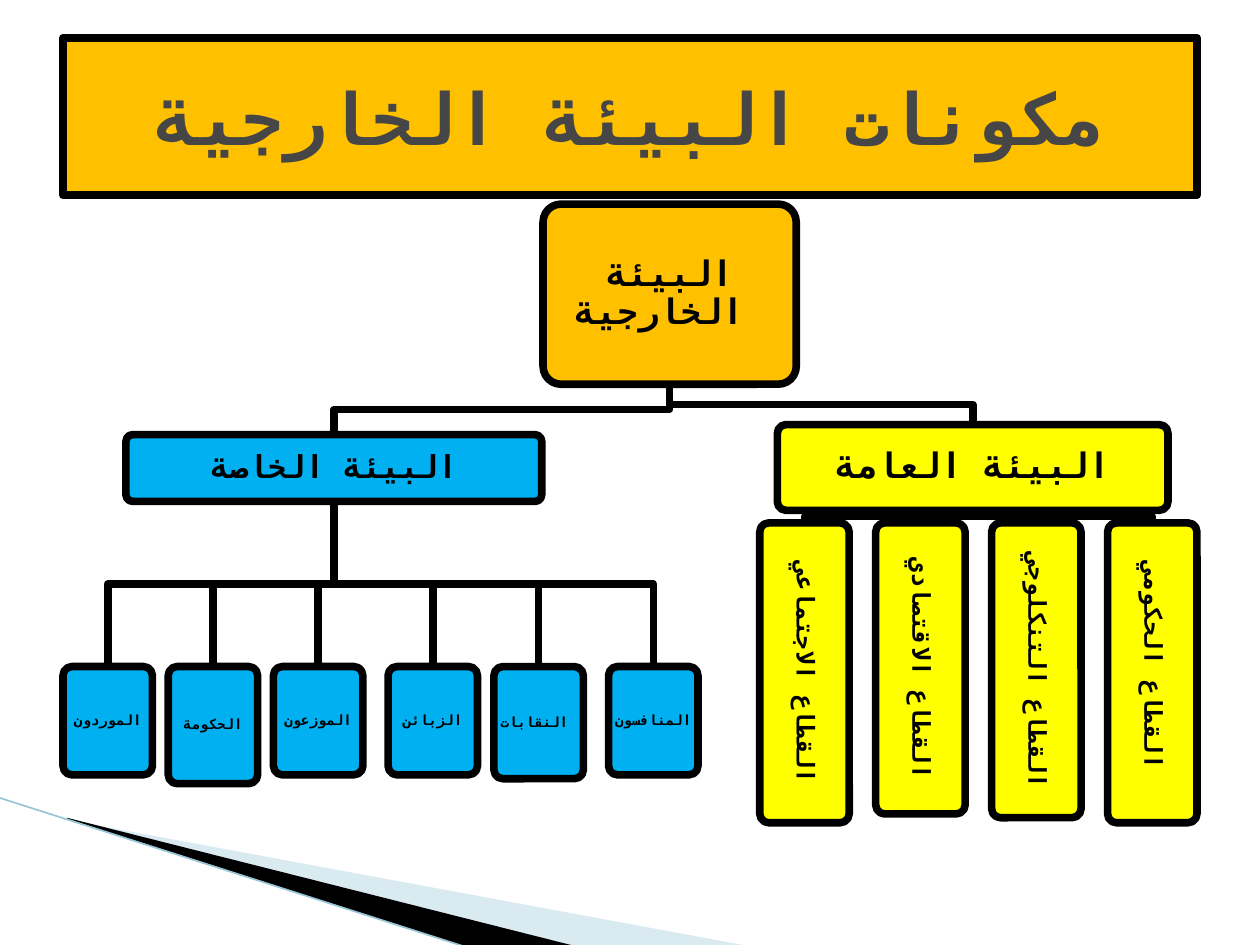
from dataclasses import dataclass

from lxml import etree
from pptx import Presentation
from pptx import util as u
from pptx.dml.color import RGBColor
from pptx.enum import shapes, text
from pptx.oxml import ns

COLORS = {
    "gold": "FFC000",
    "blue": "00B0F0",
    "yellow": "FFFF00",
    "black": "000000",
    "gray": "464646",
    "ice": "A0CBDC",
    "edge": "97C5D8",
}
FONT = "DejaVu Sans Mono"
COLUMNS, ROWS = 100, 75
LINE = 4.33

prs = Presentation()
prs.slide_width, prs.slide_height = u.Inches(10), u.Inches(7.5)


@dataclass(frozen=True)
class Box:
    label: str
    col: float
    row: float
    cols: float
    rows: float
    color: str
    size: int
    inset: float
    vertical: bool = False

    @property
    def middle(self) -> float:
        return self.col + self.cols / 2

    @property
    def bottom(self) -> float:
        return self.row + self.rows


def x(col: float) -> int:
    return round(prs.slide_width * col / COLUMNS)


def y(row: float) -> int:
    return round(prs.slide_height * row / ROWS)


def rgb(name: str) -> RGBColor:
    return RGBColor.from_string(COLORS[name])


def paint(sp, fill: str, width: float) -> None:
    sp.fill.solid()
    sp.fill.fore_color.rgb = rgb(fill)
    sp.line.color.rgb = rgb("black")
    sp.line.width = u.Pt(width)


def write(sp, label: str, *, size: int, color: str = "black", spacing: float = 1.0) -> None:
    tf = sp.text_frame
    tf.word_wrap = True
    tf.auto_size = text.MSO_AUTO_SIZE.NONE
    tf.vertical_anchor = text.MSO_ANCHOR.MIDDLE
    p = tf.paragraphs[0]
    p.alignment = text.PP_ALIGN.CENTER
    p.line_spacing = spacing
    r = p.add_run()
    r.text = label
    r.font.size = u.Pt(size)
    r.font.bold = True
    r.font.name = FONT
    r.font.color.rgb = rgb(color)
    etree.SubElement(r._r.get_or_add_rPr(), ns.qn("a:cs"), typeface=FONT)


def draw_path(s, points: list[tuple[float, float]], *, close: bool):
    start, *rest = [(x(col), y(row)) for col, row in points]
    builder = s.shapes.build_freeform(*start)
    builder.add_line_segments(rest, close=close)
    sp = builder.convert_to_shape()
    sp.shadow.inherit = False
    return sp


def draw_wedge(s, points: list[tuple[float, float]], color: str, opacity: int) -> None:
    sp = draw_path(s, points, close=True)
    sp.fill.solid()
    sp.fill.fore_color.rgb = rgb(color)
    sp.line.fill.background()
    if opacity < 100:
        clr = sp._element.spPr.find(".//" + ns.qn("a:srgbClr"))
        etree.SubElement(clr, ns.qn("a:alpha"), val=str(opacity * 1000))


def draw_box(s, box: Box) -> None:
    sp = s.shapes.add_shape(
        shapes.MSO_SHAPE.ROUNDED_RECTANGLE, x(box.col), y(box.row), x(box.cols), y(box.rows)
    )
    sp.adjustments[0] = 0.1
    sp.shadow.inherit = False
    paint(sp, box.color, LINE)
    write(sp, box.label, size=box.size, spacing=0.9)
    tf = sp.text_frame
    tf.margin_left = tf.margin_right = tf.margin_top = tf.margin_bottom = u.Inches(box.inset)
    if box.vertical:
        tf._txBody.bodyPr.set("vert", "vert")


def draw_branch(s, parent: Box, child: Box) -> None:
    bend = (parent.bottom + child.row) / 2
    points = [
        (parent.middle, parent.bottom),
        (parent.middle, bend),
        (child.middle, bend),
        (child.middle, child.row),
    ]
    sp = draw_path(s, points, close=False)
    sp.fill.background()
    sp.line.color.rgb = rgb("black")
    sp.line.width = u.Pt(LINE)
    draw_box(s, child)


ROOT = Box("البيئة الخارجية ", 43.1, 16.2, 20.1, 14.3, "gold", 20, 0.08)
SPECIFIC = Box("البيئة الخاصة", 10, 34.5, 33, 5.3, "blue", 18, 0.07)
GENERAL = Box("البيئة العامة", 61.7, 33.7, 31, 6.8, "yellow", 20, 0.08)
ACTORS = [
    Box(label, col, 52.9, 7.1, rows, "blue", 8, 0.03)
    for label, col, rows in [
        ("الموردون", 5, 8.6),
        ("الحكومة", 13.35, 9.3),
        ("الموزعون", 21.7, 8.6),
        ("الزبائن", 30.8, 8.6),
        ("النقابات ", 39.2, 8.9),
        ("المنافسون", 48.3, 8.6),
    ]
]
SECTORS = [
    Box(label, 60.3 + 9.2 * i, 41.5, 7.1, rows, "yellow", 14, 0.06, vertical=True)
    for i, (label, rows) in enumerate([
        ("القطاع الاجتماعي", 23.8),
        ("القطاع الاقتصادي", 23.1),
        ("القطاع التنكلوجي", 23.4),
        ("القطاع الحكومي ", 23.8),
    ])
]


def main() -> None:
    s = prs.slides.add_slide(prs.slide_layouts[5])
    title = s.shapes.title
    title.left, title.top, title.width, title.height = x(5), y(3), x(90), y(12.5)
    paint(title, "gold", 4.5)
    write(title, "مكونات البيئة الخارجية", size=41, color="gray")

    draw_wedge(s, [(5.5, 65.1), (59.5, 75.1), (45.6, 75.1), (5.5, 65)], "ice", 40)
    draw_wedge(s, [(5.3, 64.9), (45.7, 75.1), (37.2, 75.2), (5.4, 65)], "black", 100)
    edge = s.shapes.add_connector(
        shapes.MSO_CONNECTOR.STRAIGHT, x(-0.1), y(63.3), x(37.1), y(75.2)
    )
    edge.line.color.rgb = rgb("edge")
    edge.line.width = u.Pt(0.95)
    etree.SubElement(edge._element.spPr, ns.qn("a:effectLst"))

    draw_box(s, ROOT)
    for parent, children in [
        (ROOT, [SPECIFIC, GENERAL]),
        (SPECIFIC, ACTORS),
        (GENERAL, SECTORS),
    ]:
        for child in children:
            draw_branch(s, parent, child)

    prs.save("out.pptx")


if __name__ == "__main__":
    main()
